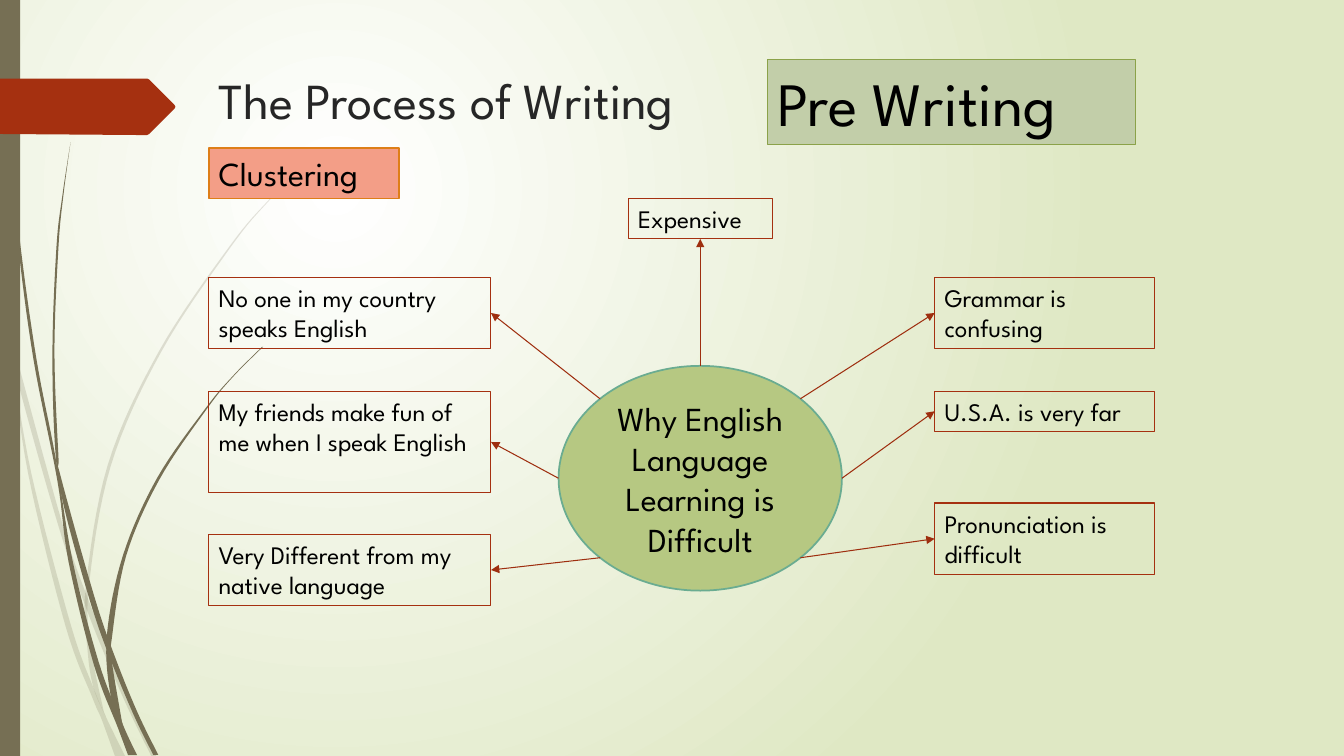
"""Build the clustering slide about the process of writing."""
from math import cos, radians, sin

from lxml.etree import SubElement
from pptx import Presentation
from pptx.dml.color import RGBColor
from pptx.enum.shapes import MSO_CONNECTOR, MSO_SHAPE
from pptx.enum.text import MSO_ANCHOR, MSO_AUTO_SIZE, PP_ALIGN
from pptx.oxml.ns import qn
from pptx.util import Inches, Pt

FONT = "League Spartan"
BLACK = RGBColor(0x00, 0x00, 0x00)
WHITE = RGBColor(0xFF, 0xFF, 0xFF)
TITLE_GREY = RGBColor(0x26, 0x26, 0x26)
PALE_GREEN = RGBColor(0xDF, 0xE8, 0xC4)
TAUPE = RGBColor(0x76, 0x6F, 0x54)
RUST = RGBColor(0xA5, 0x30, 0x10)
ARROW_RUST = RGBColor(0x9E, 0x2E, 0x0F)
STAGE_FILL = RGBColor(0xC2, 0xCE, 0xA9)
STAGE_LINE = RGBColor(0x8B, 0xA2, 0x49)
METHOD_FILL = RGBColor(0xF3, 0x9E, 0x87)
METHOD_LINE = RGBColor(0xDE, 0x7E, 0x18)
TOPIC_FILL = RGBColor(0xB6, 0xC8, 0x82)
TOPIC_LINE = RGBColor(0x6A, 0xAC, 0x91)

TOPIC = (5.54, 3.63, 2.81, 2.23)
TOP, LEFT, BOTTOM, RIGHT = range(4)
REASONS = [
    ("Expensive", (6.23, 1.97, 1.43, 0.4), 270, BOTTOM),
    ("No one in my country speaks English", (2.07, 2.75, 2.8, 0.71), 225, RIGHT),
    ("My friends make fun of me when I speak English",
     (2.07, 3.88, 2.8, 1.01), 180, RIGHT),
    ("Very Different from my native language", (2.07, 5.3, 2.8, 0.71), 135, RIGHT),
    ("Grammar is confusing", (9.27, 2.75, 2.18, 0.71), 315, LEFT),
    ("U.S.A. is very far", (9.27, 3.88, 2.18, 0.4), 0, LEFT),
    ("Pronunciation is difficult", (9.27, 4.99, 2.18, 0.71), 45, LEFT),
]

PALE_WISPS = [
    ([(0, 2.82), (0.09, 3.22), (0.14, 3.45), (0.62, 5.2), (0.88, 5.96),
      (1.27, 6.92), (1.55, 7.5)],
     [(1.5, 7.5), (1.23, 6.94), (0.88, 6.1), (0.58, 5.22), (0.17, 3.76), (0, 2.99)]),
    ([(0.11, 3.5), (0.31, 4.69), (0.7, 6.19), (0.93, 6.83), (1.05, 7.11), (1.24, 7.5)],
     [(1.14, 7.5), (1.01, 7.14), (0.92, 6.93), (0.65, 6.21), (0.28, 4.7), (0.11, 3.5)]),
    ([(3.12, 1.53), (2.68, 1.97), (2.28, 2.44), (1.58, 3.48), (1.07, 4.61),
      (0.85, 5.84), (0.87, 6.46), (0.93, 6.83), (1.05, 7.11)],
     [(1.03, 7.06), (0.91, 6.46), (0.88, 5.84), (1.1, 4.62), (1.6, 3.49),
      (2.29, 2.45), (2.68, 1.98), (3.12, 1.54)]),
]
DARK_WISPS = [
    ([(0.04, 0), (0.08, 1.09), (0.19, 2.32), (0.36, 3.55), (0.55, 4.53),
      (0.72, 5.56), (0.98, 6.57), (1.22, 7.19), (1.36, 7.49)],
     [(1.27, 7.49), (1.17, 7.22), (0.93, 6.59), (0.68, 5.57), (0.57, 4.77),
      (0.33, 3.55), (0.17, 2.33), (0.07, 1.1), (0.03, 0)]),
    ([(0.7, 1.41), (0.63, 1.93), (0.58, 2.45), (0.54, 3.49), (0.58, 4.53),
      (0.6, 4.72), (0.93, 5.9), (1.13, 6.49), (1.36, 7.06), (1.57, 7.49)],
     [(1.52, 7.49), (1.32, 7.08), (1.06, 6.45), (0.88, 5.92), (0.64, 5.05),
      (0.55, 4.49), (0.52, 3.49), (0.56, 2.45), (0.62, 1.93), (0.7, 1.41)]),
    ([(2.6, 3.44), (2.31, 3.73), (2.04, 4.05), (1.56, 4.74), (1.22, 5.51),
      (1.06, 6.31), (1.1, 6.91), (1.22, 7.19)],
     [(1.21, 7.16), (1.11, 6.56), (1.11, 6.33), (1.25, 5.52), (1.58, 4.76),
      (2.05, 4.06), (2.31, 3.74), (2.61, 3.44)]),
]
RIBBON = [(0, 0.78), (1.46, 0.78), (1.48, 0.79), (1.73, 1.04), (1.74, 1.06),
          (1.73, 1.08), (1.48, 1.33), (1.46, 1.34), (1.36, 1.34), (0, 1.33)]


def smooth(points, steps=8):
    """Return a Catmull-Rom curve through the points."""
    padded = [points[0], *points, points[-1]]
    curve = [points[0]]
    for a, b, c, d in zip(padded, padded[1:], padded[2:], padded[3:]):
        for i in range(1, steps + 1):
            t = i / steps
            curve.append(tuple(
                (2 * q + (s - p) * t + (2 * p - 5 * q + 4 * s - u) * t ** 2
                 + (3 * q - p - 3 * s + u) * t ** 3) / 2
                for p, q, s, u in zip(a, b, c, d)))
    return curve


def paint(sp, fill=None, line=None, width=0.75):
    """Set fill and outline and remove the shadow."""
    sp.shadow.inherit = False
    if fill is None:
        sp.fill.background()
    else:
        sp.fill.solid()
        sp.fill.fore_color.rgb = fill
    if line is None:
        sp.line.fill.background()
    else:
        sp.line.color.rgb = line
        sp.line.width = Pt(width)


def write(sp, text, size, color=BLACK, align=PP_ALIGN.LEFT, anchor=MSO_ANCHOR.TOP,
          fit=MSO_AUTO_SIZE.NONE):
    """Put one formatted paragraph into a shape."""
    tf = sp.text_frame
    tf.text = text
    tf.word_wrap = True
    tf.auto_size = fit
    tf.vertical_anchor = anchor
    p = tf.paragraphs[0]
    p.alignment = align
    font = p.runs[0].font
    font.name, font.size, font.color.rgb = FONT, Pt(size), color


def add_outline(slide, points, color, alpha=None):
    """Draw a closed filled outline."""
    corners = [(Inches(x), Inches(y)) for x, y in points]
    builder = slide.shapes.build_freeform(*corners[0])
    builder.add_line_segments(corners[1:])
    sp = builder.convert_to_shape()
    paint(sp, color)
    if alpha is not None:
        clr = sp.element.spPr.find(qn("a:solidFill"))[0]
        SubElement(clr, qn("a:alpha"), val=str(alpha * 1000))


def add_box(slide, text, at, size, fill=None, line=RUST, width=0.75):
    """Add a labelled rectangle."""
    sp = slide.shapes.add_shape(MSO_SHAPE.RECTANGLE, *map(Inches, at))
    paint(sp, fill, line, width)
    write(sp, text, size, fit=MSO_AUTO_SIZE.SHAPE_TO_FIT_TEXT)
    return sp


def add_arrow(slide, angle, box, site):
    """Add an arrow from the topic's rim to a side of a box."""
    left, top, width, height = TOPIC
    x = Inches(left + width / 2 * (1 + cos(radians(angle))))
    y = Inches(top + height / 2 * (1 + sin(radians(angle))))
    line = slide.shapes.add_connector(MSO_CONNECTOR.STRAIGHT, x, y, x, y)
    line.end_connect(box, site)
    line.line.color.rgb = ARROW_RUST
    line.line.width = Pt(0.75)
    spPr = line.element.spPr
    SubElement(spPr.find(qn("a:ln")), qn("a:tailEnd"), type="triangle")
    SubElement(spPr, qn("a:effectLst"))


def add_background(slide):
    """Fill the background with a radial gradient and the side decoration."""
    fill = slide.background.fill
    fill.gradient()
    for stop, color in zip(fill.gradient_stops, (WHITE, PALE_GREEN)):
        stop.color.rgb = color
    grad = next(slide.element.iter(qn("a:gradFill")))
    grad.remove(grad.find(qn("a:lin")))
    circle = SubElement(grad, qn("a:path"), {"path": "circle"})
    SubElement(circle, qn("a:fillToRect"), l="50000", t="50000", r="100000", b="100000")
    for wisps, alpha in ((PALE_WISPS, 20), (DARK_WISPS, None)):
        for down, up in wisps:
            add_outline(slide, smooth(down) + smooth(up), TAUPE, alpha)
    bar = slide.shapes.add_shape(MSO_SHAPE.RECTANGLE, 0, 0, Inches(0.2), Inches(7.5))
    paint(bar, TAUPE)
    add_outline(slide, RIBBON, RUST)


def main():
    """Build and save the slide."""
    prs = Presentation()
    prs.slide_width, prs.slide_height = Inches(13.33), Inches(7.5)
    slide = prs.slides.add_slide(prs.slide_layouts[5])
    add_background(slide)

    title = slide.shapes.title
    title.left, title.top, title.width, title.height = map(
        Inches, (2.07, 0.64, 9.75, 0.73))
    write(title, "The Process of Writing", 36, TITLE_GREY)

    add_box(slide, "Pre Writing", (7.61, 0.59, 3.65, 0.84), 44, STAGE_FILL, STAGE_LINE)
    add_box(slide, "Clustering", (2.07, 1.47, 1.89, 0.5), 24,
            METHOD_FILL, METHOD_LINE, 1.25)

    topic = slide.shapes.add_shape(MSO_SHAPE.OVAL, *map(Inches, TOPIC))
    paint(topic, TOPIC_FILL, TOPIC_LINE, 1.25)
    write(topic, "Why English Language Learning is Difficult", 24,
          align=PP_ALIGN.CENTER, anchor=MSO_ANCHOR.MIDDLE)

    for text, at, angle, site in REASONS:
        box = add_box(slide, text, at, 18)
        add_arrow(slide, angle, box, site)

    prs.save("out.pptx")


if __name__ == "__main__":
    main()
